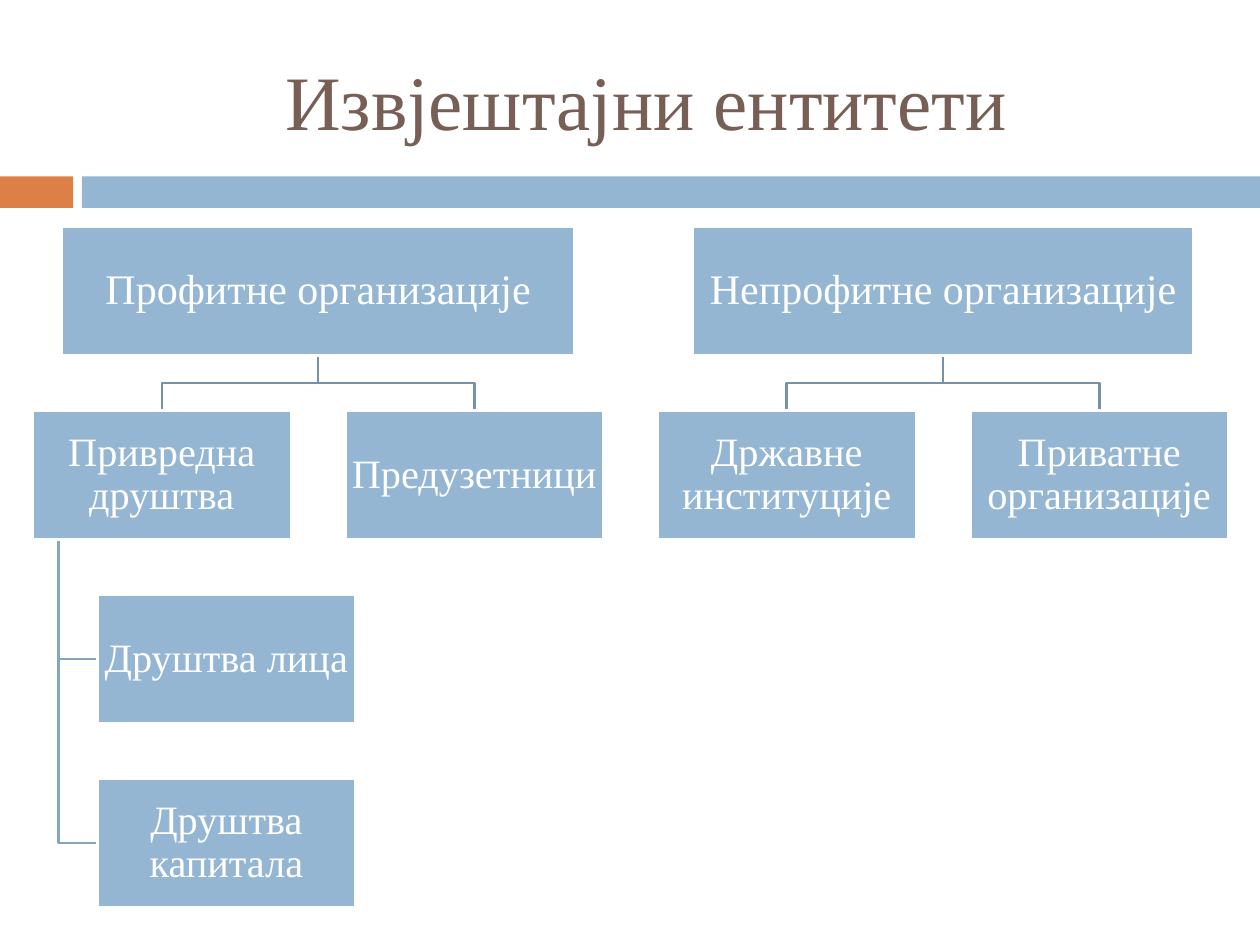
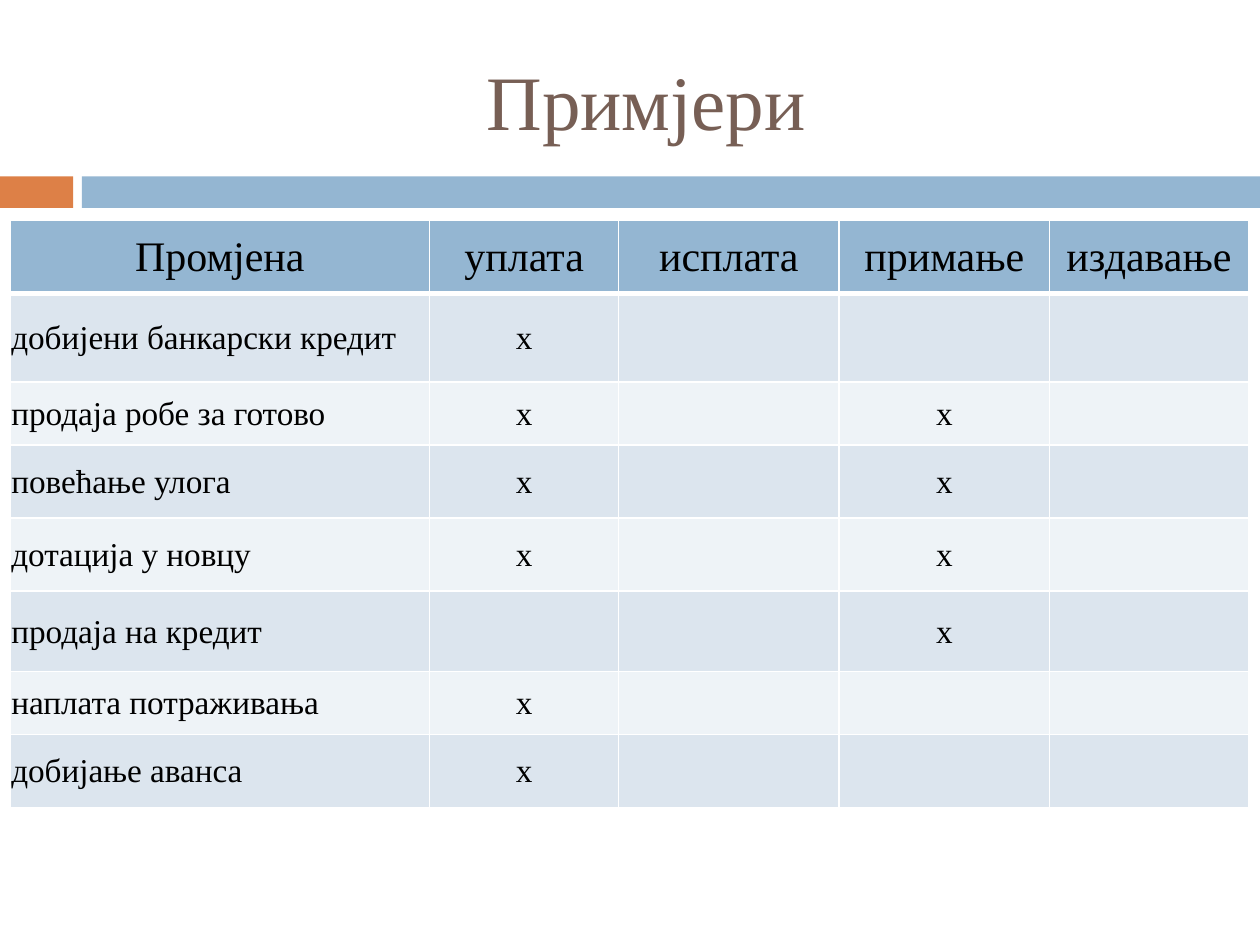
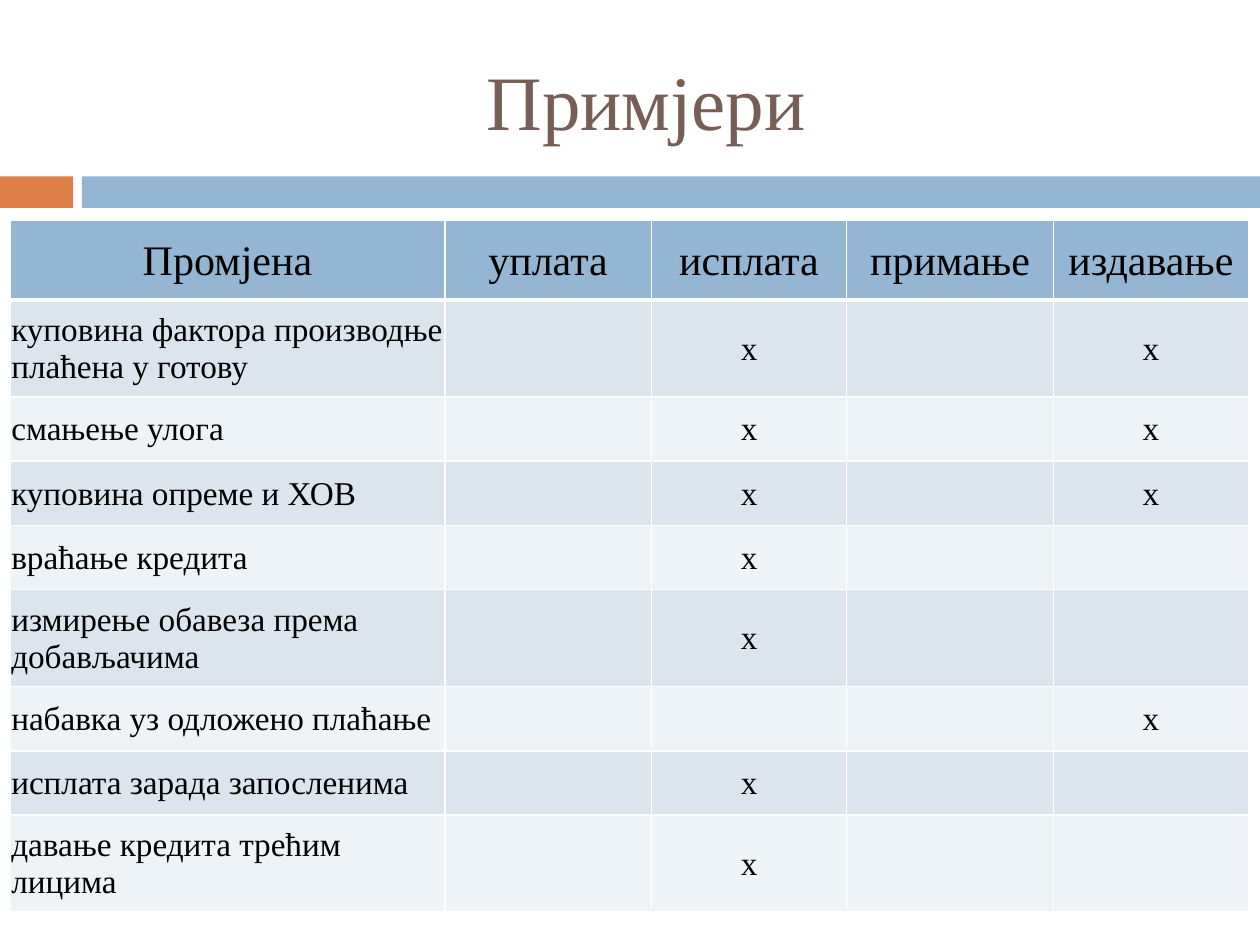
import pptx
import pptx.dml.color
import pptx.enum.shapes
import pptx.enum.text
import pptx.oxml
import pptx.oxml.ns
import pptx.util

Inches, Pt = pptx.util.Inches, pptx.util.Pt
CENTER = pptx.enum.text.PP_ALIGN.CENTER
LEFT = pptx.enum.text.PP_ALIGN.LEFT
MIDDLE = pptx.enum.text.MSO_ANCHOR.MIDDLE

# Shared look
WIDTH, HEIGHT = 10, 7.5
FONT = "Times New Roman"
BLUE, ORANGE, BROWN = "94B6D2", "DD8047", "775F55"
WHITE, BLACK = "FFFFFF", "000000"
STRIPES = ("DCE5EE", "EEF3F7")
BRANCH, SUBBRANCH = "7792A8", "86A5BF"

# Organisation chart grid
CHART_LEFT, CHART_TOP = 0.26, 1.8
COLUMN_STEP, ROW_STEP = 2.48, 1.46
BOX_WIDTH, BOX_HEIGHT = 2.05, 1.02

# Each head has a width, and children with their own subordinates
ENTITIES = [
    ("Профитне организације", 4.07, [
        ("Привредна друштва", ["Друштва лица", "Друштва капитала"]),
        ("Предузетници", []),
    ]),
    ("Непрофитне организације", 3.98, [
        ("Државне институције", []),
        ("Приватне организације", []),
    ]),
]

# Tables of changes: row height, change, columns that are marked
HEADINGS = ["Промјена", "уплата", "исплата", "примање", "издавање"]
INFLOW_WIDTHS = [3.33, 1.5, 1.75, 1.67, 1.58]
INFLOW_HEADER = 0.58
INFLOWS = [
    (0.7, "добијени банкарски кредит", ["уплата"]),
    (0.5, "продаја робе за готово", ["уплата", "примање"]),
    (0.58, "повећање улога", ["уплата", "примање"]),
    (0.58, "дотација у новцу", ["уплата", "примање"]),
    (0.64, "продаја на кредит", ["примање"]),
    (0.5, "наплата потраживања", ["уплата"]),
    (0.58, "добијање аванса", ["уплата"]),
]
OUTFLOW_WIDTHS = [3.45, 1.64, 1.55, 1.64, 1.55]
OUTFLOW_HEADER = 0.63
OUTFLOWS = [
    (0.77, "куповина фактора производње плаћена у готову", ["исплата", "издавање"]),
    (0.51, "смањење улога", ["исплата", "издавање"]),
    (0.51, "куповина опреме и ХОВ", ["исплата", "издавање"]),
    (0.51, "враћање кредита", ["исплата"]),
    (0.77, "измирење обавеза према добављачима", ["исплата"]),
    (0.51, "набавка уз одложено плаћање", ["издавање"]),
    (0.51, "исплата зарада запосленима", ["исплата"]),
    (0.77, "давање кредита трећим лицима", ["исплата"]),
]


def color(hex_code):
    return pptx.dml.color.RGBColor.from_string(hex_code)


def write(frame, text, size, hex_code, align=CENTER):
    frame.text = text
    paragraph = frame.paragraphs[0]
    paragraph.alignment = align
    for run in paragraph.runs:
        run.font.name, run.font.size = FONT, Pt(size)
        run.font.bold = False
        run.font.color.rgb = color(hex_code)


def add_block(slide, left, top, width, height, fill, outline=None):
    block = slide.shapes.add_shape(
        pptx.enum.shapes.MSO_SHAPE.RECTANGLE,
        Inches(left), Inches(top), Inches(width), Inches(height))
    block.shadow.inherit = False
    block.fill.solid()
    block.fill.fore_color.rgb = color(fill)
    if outline:
        block.line.color.rgb = color(outline)
        block.line.width = Pt(1.5)
    else:
        block.line.fill.background()
    return block


def add_titled_slide(deck, heading):
    slide = deck.slides.add_slide(deck.slide_layouts[5])
    # Band under the title
    add_block(slide, 0, 1.4, 0.58, 0.25, ORANGE)
    add_block(slide, 0.65, 1.4, WIDTH - 0.65, 0.25, BLUE)
    # Title
    title = slide.shapes.title
    title.left, title.top = Inches(0.67), Inches(0.25)
    title.width, title.height = Inches(8.92), Inches(1.08)
    title.text_frame.vertical_anchor = MIDDLE
    write(title.text_frame, heading, 44, BROWN)
    return slide


# Organisation chart
def column_left(column):
    return CHART_LEFT + column * COLUMN_STEP


def row_top(row):
    return CHART_TOP + row * ROW_STEP


def add_entity(slide, left, row, text, width=BOX_WIDTH, size=23):
    box = add_block(slide, left, row_top(row), width, BOX_HEIGHT, BLUE, WHITE)
    frame = box.text_frame
    frame.word_wrap = True
    frame.vertical_anchor = MIDDLE
    frame.margin_left = frame.margin_right = Inches(0.02)
    frame.margin_top = frame.margin_bottom = Inches(0.02)
    write(frame, text, size, WHITE)
    frame.paragraphs[0].line_spacing = 0.9


def add_branch(slide, points, hex_code):
    corners = [(Inches(x), Inches(y)) for x, y in points]
    builder = slide.shapes.build_freeform(*corners[0])
    builder.add_line_segments(corners[1:], close=False)
    branch = builder.convert_to_shape()
    branch.shadow.inherit = False
    branch.fill.background()
    branch.line.color.rgb = color(hex_code)
    branch.line.width = Pt(1.5)


def add_subordinates(slide, parent_left, names):
    trunk = parent_left + BOX_WIDTH / 10
    left = parent_left + BOX_WIDTH / 4
    for row, name in enumerate(names, start=2):
        middle = row_top(row) + BOX_HEIGHT / 2
        add_branch(slide, [(trunk, row_top(1) + BOX_HEIGHT), (trunk, middle),
                           (left, middle)], SUBBRANCH)
        add_entity(slide, left, row, name)


def add_family(slide, first_column, head, head_width, children):
    lefts = [column_left(first_column + i) for i in range(len(children))]
    center = (lefts[0] + lefts[-1] + BOX_WIDTH) / 2
    head_bottom = row_top(0) + BOX_HEIGHT
    fork = (head_bottom + row_top(1)) / 2
    for left, (name, subordinates) in zip(lefts, children):
        child_center = left + BOX_WIDTH / 2
        add_branch(slide, [(center, head_bottom), (center, fork),
                           (child_center, fork), (child_center, row_top(1))], BRANCH)
        add_subordinates(slide, left, subordinates)
        add_entity(slide, left, 1, name)
    add_entity(slide, center - head_width / 2, 0, head, head_width, 24)


# Tables
def set_borders(cell, top, bottom):
    properties = cell._tc.get_or_add_tcPr()
    for side, points in (("L", 1), ("R", 1), ("T", top), ("B", bottom)):
        properties.append(pptx.oxml.parse_xml(
            f'<a:ln{side} {pptx.oxml.ns.nsdecls("a")} w="{Pt(points)}">'
            f'<a:solidFill><a:srgbClr val="{WHITE}"/></a:solidFill></a:ln{side}>'))


def fill_cell(cell, text, size, fill, align, top=1, bottom=1):
    set_borders(cell, top, bottom)
    cell.fill.solid()
    cell.fill.fore_color.rgb = color(fill)
    cell.vertical_anchor = MIDDLE
    cell.margin_left = cell.margin_right = cell.margin_top = Inches(0.01)
    cell.margin_bottom = 0
    if text:
        write(cell.text_frame, text, size, BLACK, align)


def add_changes(slide, widths, header_height, changes):
    heights = [header_height] + [height for height, _, _ in changes]
    table = slide.shapes.add_table(
        len(heights), len(widths), Inches(0.08), Inches(1.75),
        Inches(sum(widths)), Inches(sum(heights))).table
    table.horz_banding = False
    for column, width in zip(table.columns, widths):
        column.width = Inches(width)
    for row, height in zip(table.rows, heights):
        row.height = Inches(height)
    for column, heading in enumerate(HEADINGS):
        fill_cell(table.cell(0, column), heading, 24, BLUE, CENTER, bottom=3)
    for row, (_, change, marked) in enumerate(changes, start=1):
        texts = [change] + ["х" if name in marked else "" for name in HEADINGS[1:]]
        for column, text in enumerate(texts):
            fill_cell(table.cell(row, column), text, 19, STRIPES[(row - 1) % 2],
                      CENTER if column else LEFT, top=3 if row == 1 else 1)


def main():
    deck = pptx.Presentation()
    deck.slide_width, deck.slide_height = Inches(WIDTH), Inches(HEIGHT)

    # Reporting entities
    entities = add_titled_slide(deck, "Извјештајни ентитети")
    first_column = 0
    for head, head_width, children in ENTITIES:
        add_family(entities, first_column, head, head_width, children)
        first_column += len(children)

    # Examples
    add_changes(add_titled_slide(deck, "Примјери"), INFLOW_WIDTHS, INFLOW_HEADER, INFLOWS)
    add_changes(add_titled_slide(deck, "Примјери"), OUTFLOW_WIDTHS, OUTFLOW_HEADER, OUTFLOWS)

    deck.save("out.pptx")


if __name__ == "__main__":
    main()
